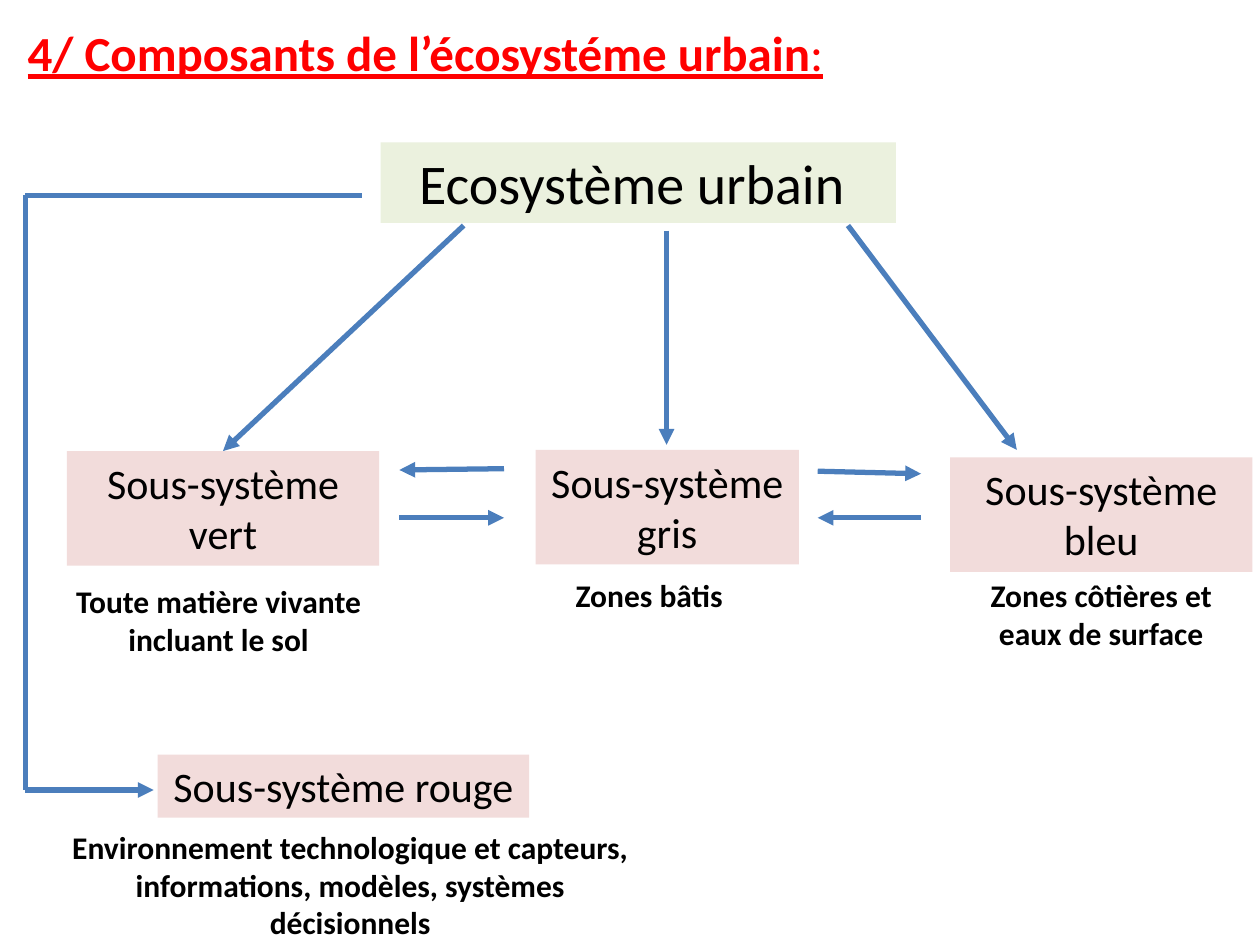
from lxml import etree
from pptx import Presentation
from pptx.dml.color import RGBColor
from pptx.enum.shapes import MSO_CONNECTOR, MSO_SHAPE
from pptx.enum.text import MSO_ANCHOR, MSO_AUTO_SIZE, PP_ALIGN
from pptx.oxml.ns import qn
from pptx.util import Inches, Pt

RED = RGBColor(0xFF, 0x00, 0x00)
BLACK = RGBColor(0x00, 0x00, 0x00)
BLUE = RGBColor(0x4B, 0x7E, 0xBC)
PALE_GREEN = RGBColor(0xEB, 0xF1, 0xDE)
PALE_PINK = RGBColor(0xF2, 0xDC, 0xDB)
LEFT, CENTER = PP_ALIGN.LEFT, PP_ALIGN.CENTER
TOP = MSO_ANCHOR.TOP
NO_AUTOFIT = MSO_AUTO_SIZE.NONE
RECTANGLE, STRAIGHT = MSO_SHAPE.RECTANGLE, MSO_CONNECTOR.STRAIGHT
TITLE_ONLY = 5
CELL = Inches(0.1)  # the slide is a grid of 100 columns by 75 rows


def write(frame, *parts, size=18, color=BLACK, bold=False, underline=False, align=CENTER):
    """Write one paragraph; each part is a text or a (text, bold) pair."""
    frame.word_wrap = True
    frame.auto_size = NO_AUTOFIT
    frame.vertical_anchor = TOP
    paragraph = frame.paragraphs[0]
    paragraph.alignment = align
    for part in parts:
        text, part_bold = part if isinstance(part, tuple) else (part, bold)
        run = paragraph.add_run()
        run.text = text
        run.font.name = "Calibri"
        run.font.size = Pt(size)
        run.font.bold = part_bold
        run.font.underline = underline
        run.font.color.rgb = color


def grid(*cells):
    return [round(cell * CELL) for cell in cells]


class Diagram:
    """Blue lines, pale boxes and bold captions on one slide."""

    def __init__(self, slide, line_color=BLUE, line_width=3):
        self.slide = slide
        self.line_color = line_color
        self.line_width = Pt(line_width)

    def title(self, place, *parts):
        heading = self.slide.shapes.title
        heading.left, heading.top, heading.width, heading.height = grid(*place)
        write(heading.text_frame, *parts, size=28, color=RED, underline=True, align=LEFT)

    def box(self, place, text, fill=PALE_PINK, size=24):
        panel = self.slide.shapes.add_shape(RECTANGLE, *grid(*place))
        panel.shadow.inherit = False
        panel.fill.solid()
        panel.fill.fore_color.rgb = fill
        panel.line.fill.background()
        write(panel.text_frame, text, size=size)

    def caption(self, place, text, align=CENTER):
        label = self.slide.shapes.add_textbox(*grid(*place))
        write(label.text_frame, text, bold=True, align=align)

    def line(self, start, end, arrow=True):
        link = self.slide.shapes.add_connector(STRAIGHT, *grid(*start, *end))
        link.line.color.rgb = self.line_color
        link.line.width = self.line_width
        if arrow:
            outline = link.line._get_or_add_ln()
            etree.SubElement(outline, qn("a:tailEnd"), type="triangle")
        etree.SubElement(link._element.spPr, qn("a:effectLst"))


def main():
    deck = Presentation()
    deck.slide_width, deck.slide_height = grid(100, 75)
    diagram = Diagram(deck.slides.add_slide(deck.slide_layouts[TITLE_ONLY]))

    diagram.title((1.2, 1.3, 66.1, 5.7), ("4/ Composants de l’écosystéme urbain", True), ":")

    # Whole system and its three main branches
    diagram.box((30.2, 11.3, 40.9, 6.4), "Ecosystème urbain ", fill=PALE_GREEN, size=32)
    for start, end in (
        ((36.8, 17.9), (17.7, 35.8)),
        ((52.9, 18.3), (52.9, 35.3)),
        ((67.3, 17.9), (80.7, 35.7)),
    ):
        diagram.line(start, end)

    # Subsystems
    for place, name in (
        ((5.3, 35.8, 24.8, 9.1), "vert"),
        ((42.5, 35.7, 20.9, 9.1), "gris"),
        ((75.4, 36.3, 24, 9.1), "bleu"),
        ((12.5, 59.9, 29.5, 5), "rouge"),
    ):
        diagram.box(place, f"Sous-système {name}")

    # What each subsystem covers
    diagram.caption((3.9, 45.7, 26.9, 7.1), "Toute matière vivante incluant le sol")
    diagram.caption((44.7, 45.2, 22, 4), "Zones bâtis", align=LEFT)
    diagram.caption((76.4, 45.2, 22, 7.1), "Zones côtières et eaux de surface")
    diagram.caption(
        (4.7, 65.2, 46.2, 10.1),
        "Environnement technologique et capteurs, informations, modèles, systèmes décisionnels",
    )

    # Exchanges between neighbours: out of grey above, back into it below
    for inner, outer, out_row, tip_row in ((40, 31.7, 37.2, 37.3), (64.9, 73.1, 37.4, 37.6)):
        diagram.line((inner, out_row), (outer, tip_row))
        diagram.line((outer, 41.1), (inner, 41.1))

    # Path around the left side to the red subsystem
    route = [(28.7, 15.5), (2, 15.5), (2, 62.7), (12.2, 62.7)]
    for start, end in zip(route, route[1:]):
        diagram.line(start, end, arrow=end == route[-1])

    deck.save("out.pptx")


if __name__ == "__main__":
    main()
